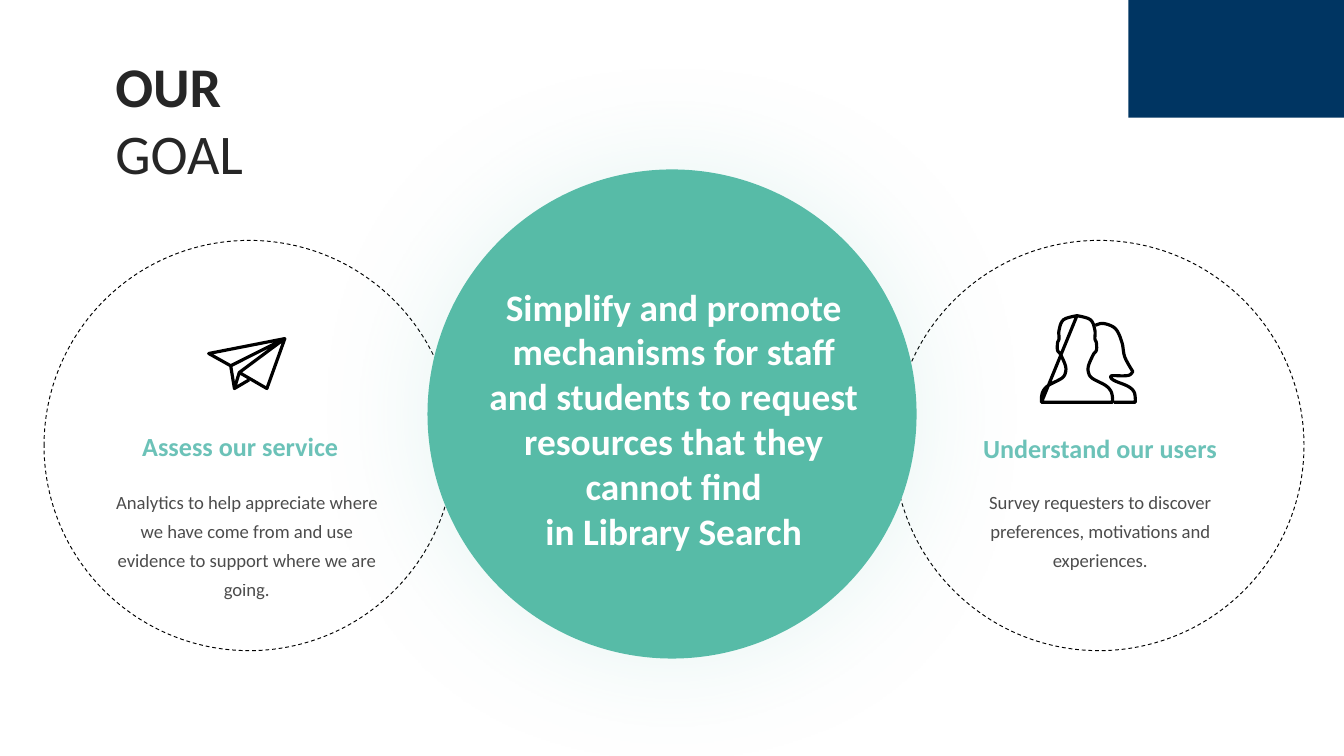
from dataclasses import dataclass

from lxml import etree
from pptx import Presentation
from pptx.dml.color import RGBColor
from pptx.enum.dml import MSO_LINE
from pptx.enum.shapes import MSO_SHAPE
from pptx.enum.text import MSO_ANCHOR, MSO_AUTO_SIZE, PP_ALIGN
from pptx.oxml.ns import qn
from pptx.util import Pt

RECTANGLE, OVAL = MSO_SHAPE.RECTANGLE, MSO_SHAPE.OVAL
LEFT, CENTER = PP_ALIGN.LEFT, PP_ALIGN.CENTER
TOP = MSO_ANCHOR.TOP
FIXED, GROW = MSO_AUTO_SIZE.NONE, MSO_AUTO_SIZE.SHAPE_TO_FIT_TEXT
DASH, SOLID = MSO_LINE.DASH, MSO_LINE.SOLID
TITLE_ONLY = 5
CURVE_STEPS = 5


@dataclass(frozen=True)
class Theme:
    font: str = "Calibri"
    navy: str = "003562"
    green: str = "57BBA7"
    mint: str = "6CC2B8"
    ink: str = "262626"
    black: str = "000000"
    white: str = "FFFFFF"
    title_size: float = 30
    goal_size: float = 20
    heading_size: float = 14
    body_size: float = 10


def set_attributes(target, values):
    for name, value in values.items():
        setattr(target, name, value)


def smooth(knots):
    padded = [knots[0], *knots, knots[-1]]
    points = [knots[0]]
    for before, start, end, after in zip(padded, padded[1:], padded[2:], padded[3:]):
        for step in range(1, CURVE_STEPS + 1):
            t = step / CURVE_STEPS
            points.append(tuple(
                b + t * (c - a + t * (2 * a - 5 * b + 4 * c - d
                                      + t * (3 * b - a - 3 * c + d))) / 2
                if step < CURVE_STEPS else c
                for a, b, c, d in zip(before, start, end, after)))
    return points


def plane_strokes():
    nose, wing, notch = (41.8, 1.2), (1, 9.2), (12.8, 15.8)
    keel, fold, flap, crease = (14.8, 28), (17.4, 19.4), (32.2, 28), (22.6, 23.4)
    return [[crease, keel, fold, flap, nose, fold, keel, notch, wing, nose, notch]]


def people_strokes():
    middle, floor = 19.8, 47.2
    half = smooth([(middle, 0.8), (12.6, 3), (10.2, 8.6), (10.2, 13.2), (9.4, 15.4),
                   (9.4, 19.4), (11, 21.6), (13.6, 27.6), (13.6, 31.4), (11.6, 34.4),
                   (4.8, 38), (1.8, 41), (0.8, 44.4), (0.8, floor)])
    mirrored = [(2 * middle - x, y) for x, y in reversed(half)]
    hair = smooth([(29.6, 6), (34, 5), (40.4, 7.8), (43.9, 15.2), (45.4, 23), (49.7, 30.8)])
    shoulder = smooth([(49.7, 30.8), (48, 32.6), (44.6, 33.1), (38.2, 33.1), (39.4, 35.4),
                       (47, 38.6), (50.2, 41.4), (51, 44.6), (51, floor)])
    return [half + mirrored + [half[-1]], hair + shoulder + [(2 * middle, floor)]]


class SlideBuilder:
    def __init__(self, slide, theme):
        self.slide = slide
        self.theme = theme

    def outline(self, shape, width, dash):
        shape.line.color.rgb = RGBColor.from_string(self.theme.black)
        set_attributes(shape.line, {"width": Pt(width), "dash_style": dash})

    def shape(self, kind, box, fill):
        shape = self.slide.shapes.add_shape(kind, *map(Pt, box))
        shape.shadow.inherit = False
        shape.fill.solid()
        shape.fill.fore_color.rgb = RGBColor.from_string(fill)
        shape.line.fill.background()
        return shape

    def glow(self, shape, color, blur, opacity):
        effects = shape._element.spPr.find(qn("a:effectLst"))
        shadow = etree.SubElement(effects, qn("a:outerShdw"), blurRad=str(Pt(blur)),
                                  dist="0", dir="0", algn="ctr", rotWithShape="0")
        tint = etree.SubElement(shadow, qn("a:srgbClr"), val=color)
        etree.SubElement(tint, qn("a:alpha"), val=str(opacity * 1000))

    def icon(self, left, top, strokes):
        builder = None
        for stroke in strokes:
            start, *rest = [(Pt(left + x), Pt(top + y)) for x, y in stroke]
            if builder is None:
                builder = self.slide.shapes.build_freeform(*start)
            else:
                builder.move_to(*start)
            builder.add_line_segments(rest, close=False)
        shape = builder.convert_to_shape()
        shape.shadow.inherit = False
        shape.fill.background()
        self.outline(shape, 1.7, SOLID)

    def fill_text(self, frame, lines, size, color, bolds, align=CENTER, spacing=1.0,
                  margins=(5, 3), wrap=True, fit=FIXED, opacity=None):
        side, edge = map(Pt, margins)
        set_attributes(frame, {
            "margin_left": side, "margin_right": side, "margin_top": edge,
            "margin_bottom": edge, "vertical_anchor": TOP, "word_wrap": wrap,
            "auto_size": fit})
        for index, (line, bold) in enumerate(zip(lines, bolds)):
            paragraph = frame.paragraphs[0] if index == 0 else frame.add_paragraph()
            paragraph.text = line
            set_attributes(paragraph, {"alignment": align, "line_spacing": spacing,
                                       "space_before": Pt(0)})
            for run in paragraph.runs:
                set_attributes(run.font, {"name": self.theme.font, "size": Pt(size),
                                          "bold": bold})
                run.font.color.rgb = RGBColor.from_string(color)
                if opacity:
                    tint = run._r.find(".//" + qn("a:srgbClr"))
                    etree.SubElement(tint, qn("a:alpha"), val=str(opacity * 1000))

    def title(self, box, lines, bolds):
        title = self.slide.shapes.title
        set_attributes(title, dict(zip(("left", "top", "width", "height"), map(Pt, box))))
        self.fill_text(title.text_frame, lines, self.theme.title_size, self.theme.ink,
                       bolds, align=LEFT)

    def text(self, box, text, size, color, bold=True, **options):
        text_box = self.slide.shapes.add_textbox(*map(Pt, box))
        self.fill_text(text_box.text_frame, [text], size, color, [bold], **options)

    def heading(self, box, text, **options):
        self.text(box, text, self.theme.heading_size, self.theme.mint,
                  margins=(0, 3.6), fit=GROW, **options)

    def body(self, box, text):
        self.text(box, text, self.theme.body_size, self.theme.black, bold=False,
                  spacing=1.3, margins=(0, 3.6), fit=GROW, opacity=70)


def main():
    presentation = Presentation()
    set_attributes(presentation, {"slide_width": Pt(720), "slide_height": Pt(405)})
    theme = Theme()
    slide = presentation.slides.add_slide(presentation.slide_layouts[TITLE_ONLY])
    builder = SlideBuilder(slide, theme)

    builder.shape(RECTANGLE, (604.5, 0, 115.5, 63), theme.navy)
    for left in (23.6, 478.8):
        ring = builder.shape(OVAL, (left, 128.8, 219.8, 219.8), theme.white)
        builder.outline(ring, 0.5, DASH)
    goal = builder.shape(OVAL, (229, 90.8, 262, 262), theme.green)
    builder.glow(goal, theme.mint, 66, 17)

    builder.body((60.2, 255.8, 144, 68.4),
                 "Analytics to help appreciate where we have come from and use "
                 "evidence to support where we are going.")
    builder.heading((76.2, 227, 136.8, 24.5), "Assess our service", align=LEFT)
    builder.icon(110.8, 180.2, plane_strokes())

    builder.body((517.4, 255.8, 144, 52.6),
                 "Survey requesters to discover preferences, motivations and experiences.")
    builder.heading((526, 228.2, 126.7, 24.5), "Understand our users", wrap=False)
    builder.icon(557.2, 168.3, people_strokes())

    builder.title((56.8, 24.5, 134.6, 70.6), ["OUR", "GOAL"], [True, False])
    builder.text((256.2, 149, 209.5, 146.2),
                 "Simplify and promote mechanisms for staff and students to request "
                 "resources that they cannot find\nin Library Search",
                 theme.goal_size, theme.white)
    presentation.save("out.pptx")


if __name__ == "__main__":
    main()
